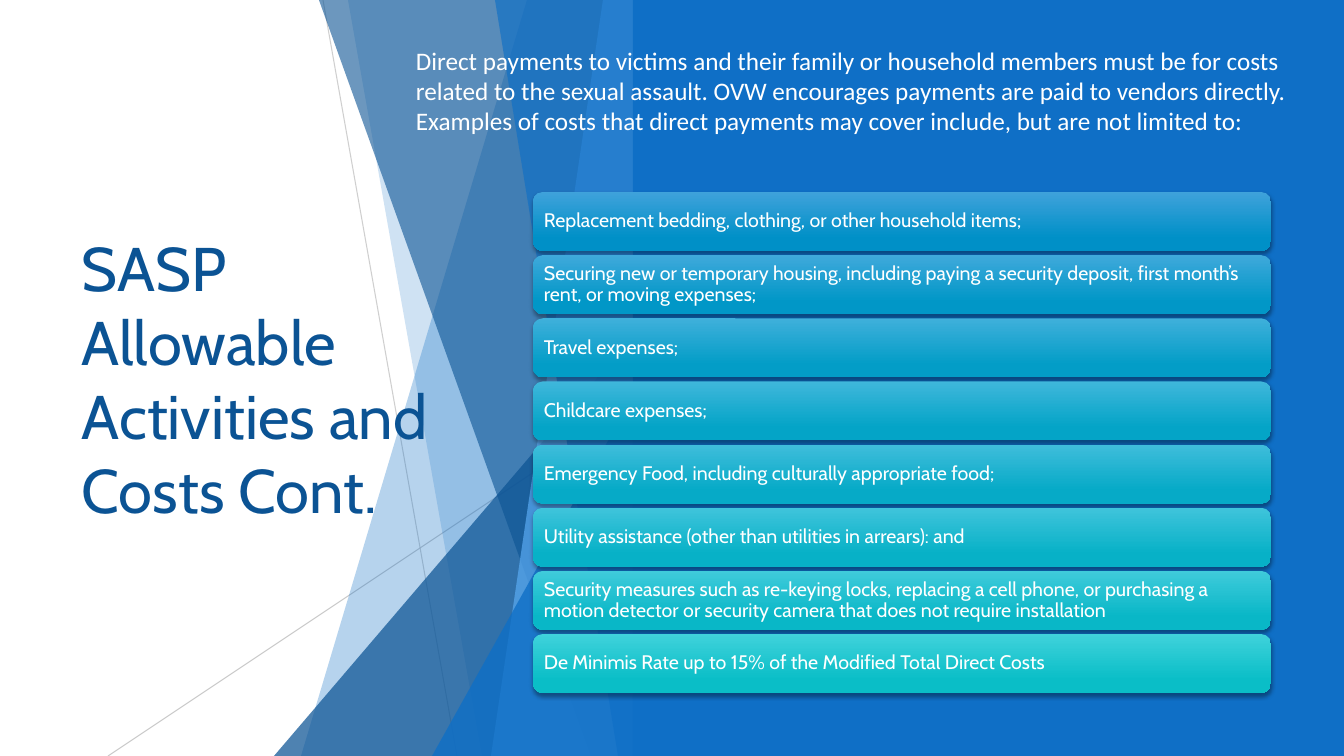
from lxml import etree
from pptx import Presentation
from pptx.dml.color import RGBColor
from pptx.enum.shapes import MSO_CONNECTOR as CONNECTOR, MSO_SHAPE as SHAPE
from pptx.enum.text import MSO_ANCHOR as ANCHOR, PP_ALIGN as ALIGN
from pptx.oxml.ns import qn
from pptx.util import Emu, Pt

PX = 914400 / 100.8

WHITE = RGBColor(0xFF, 0xFF, 0xFF)
GREY = RGBColor(0xBF, 0xBF, 0xBF)
NAVY = RGBColor(0x0B, 0x53, 0x94)
BLUE = RGBColor(0x0F, 0x6F, 0xC6)
SKY = RGBColor(0x59, 0xAA, 0xF2)
FIRST_ROW = RGBColor(0x3F, 0xA2, 0xDB), RGBColor(0x00, 0x90, 0xC7)
LAST_ROW = RGBColor(0x3F, 0xD2, 0xDB), RGBColor(0x0A, 0xBE, 0xC7)

TITLE = "SASP Allowable Activities and Costs Cont."
INTRO = (
    "Direct payments to victims and their family or household members must be "
    "for costs related to the sexual assault. OVW encourages payments are paid "
    "to vendors directly. Examples of costs that direct payments may cover "
    "include, but are not limited to:"
)
COSTS = [
    "Replacement bedding, clothing, or other household items;",
    "Securing new or temporary housing, including paying a security deposit, "
    "first month’s rent, or moving expenses;",
    "Travel expenses;",
    "Childcare expenses;",
    "Emergency Food, including culturally appropriate food;",
    "Utility assistance (other than utilities in arrears): and",
    "Security measures such as re-keying locks, replacing a cell phone, or "
    "purchasing a motion detector or security camera that does not require "
    "installation",
    "De Minimis Rate up to 15% of the Modified Total Direct Costs",
]

# Offsets inside the facet box: apex x, apex y, foot x, colour, opacity in %
FACETS = [
    (419, 0, 193, BLUE, 30),
    (240, 0, 374, BLUE, 20),
    (525, 336, 166, NAVY, 72),
    (211, 0, 483, NAVY, 60),
    (495, 0, 383, SKY, 70),
    (387, 0, 510, BLUE, 65),
    (525, 396, 324, BLUE, 80),
]
# Start x, start y, end x, opacity in %; every line ends at the box bottom
FACET_LINES = [(215, 0, 349, 75), (525, 406, 0, 80)]


def px(*lengths):
    return [Emu(round(length * PX)) for length in lengths]


def set_opacity(shape, percent):
    colour = shape.element.spPr.find(".//" + qn("a:srgbClr"))
    etree.SubElement(colour, qn("a:alpha"), val=str(percent * 1000))


def add_soft_shadow(shape):
    effects = etree.SubElement(shape.element.spPr, qn("a:effectLst"))
    shadow = etree.SubElement(
        effects, qn("a:outerShdw"), blurRad=str(Pt(3)), dist=str(Pt(2)),
        dir="5400000", algn="ctr", rotWithShape="0")
    black = etree.SubElement(shadow, qn("a:srgbClr"), val="000000")
    etree.SubElement(black, qn("a:alpha"), val="35000")


def write(frame, wording, font, size, colour, anchor):
    frame.word_wrap = True
    frame.vertical_anchor = anchor
    paragraph = frame.paragraphs[0]
    paragraph.alignment = ALIGN.LEFT
    run = paragraph.add_run()
    run.text = wording
    run.font.name = font
    run.font.size = Pt(size)
    run.font.color.rgb = colour
    return paragraph


def add_facets(slide, left, top, width, height):
    right, bottom = left + width, top + height
    for start_x, start_y, end_x, opacity in FACET_LINES:
        line = slide.shapes.add_connector(
            CONNECTOR.STRAIGHT,
            *px(left + start_x, top + start_y, left + end_x, bottom))
        line.line.color.rgb = GREY
        line.line.width = Pt(0.75)
        set_opacity(line, opacity)
        etree.SubElement(line.element.spPr, qn("a:effectLst"))
    for apex_x, apex_y, foot_x, colour, opacity in FACETS:
        outline = slide.shapes.build_freeform(left + apex_x, top + apex_y, PX)
        outline.add_line_segments(
            [(right, top + apex_y), (right, bottom), (left + foot_x, bottom)])
        facet = outline.convert_to_shape()
        facet.shadow.inherit = False
        facet.fill.solid()
        facet.fill.fore_color.rgb = colour
        facet.line.fill.background()
        set_opacity(facet, opacity)


def add_panel(slide, *box):
    panel = slide.shapes.add_shape(SHAPE.RECTANGLE, *px(*box))
    panel.shadow.inherit = False
    panel.fill.solid()
    panel.fill.fore_color.rgb = BLUE
    panel.line.fill.background()


def add_title(slide, *box):
    title = slide.shapes.add_textbox(*px(*box))
    write(title.text_frame, TITLE, "Cabin", 44, NAVY, ANCHOR.MIDDLE)


def add_intro(slide, *box):
    intro = slide.shapes.add_textbox(*px(*box))
    write(intro.text_frame, INTRO, "Calibri", 18, WHITE, ANCHOR.TOP)


def blend(first, last, share):
    return RGBColor(*(round(a + (b - a) * share) for a, b in zip(first, last)))


def add_cost_list(slide, left, top, width, height):
    row_height = 59
    steps = len(COSTS) - 1
    pitch = (height - row_height) / steps
    for index, cost in enumerate(COSTS):
        row = slide.shapes.add_shape(
            SHAPE.ROUNDED_RECTANGLE,
            *px(left, top + index * pitch, width, row_height))
        row.fill.gradient()
        row.fill.gradient_angle = 270
        for stop, position, first, last in zip(
                row.fill.gradient_stops, (0, 0.78), FIRST_ROW, LAST_ROW):
            stop.position = position
            stop.color.rgb = blend(first, last, index / steps)
        row.line.fill.background()
        add_soft_shadow(row)
        frame = row.text_frame
        frame.margin_left, frame.margin_right = px(8, 8)
        frame.margin_top, frame.margin_bottom = px(6, 6)
        paragraph = write(frame, cost, "Cabin", 14, WHITE, ANCHOR.MIDDLE)
        paragraph.line_spacing = 0.9


def main():
    deck = Presentation()
    deck.slide_width, deck.slide_height = px(1344, 756)
    slide = deck.slides.add_slide(deck.slide_layouts[6])
    add_facets(slide, 108, 0, 525, 756)
    add_title(slide, 72, 152, 391, 452)
    add_panel(slide, 633, 0, 711, 756)
    add_cost_list(slide, 533, 192, 738, 501)
    add_intro(slide, 406, 40, 938, 102)
    deck.save("out.pptx")


if __name__ == "__main__":
    main()
